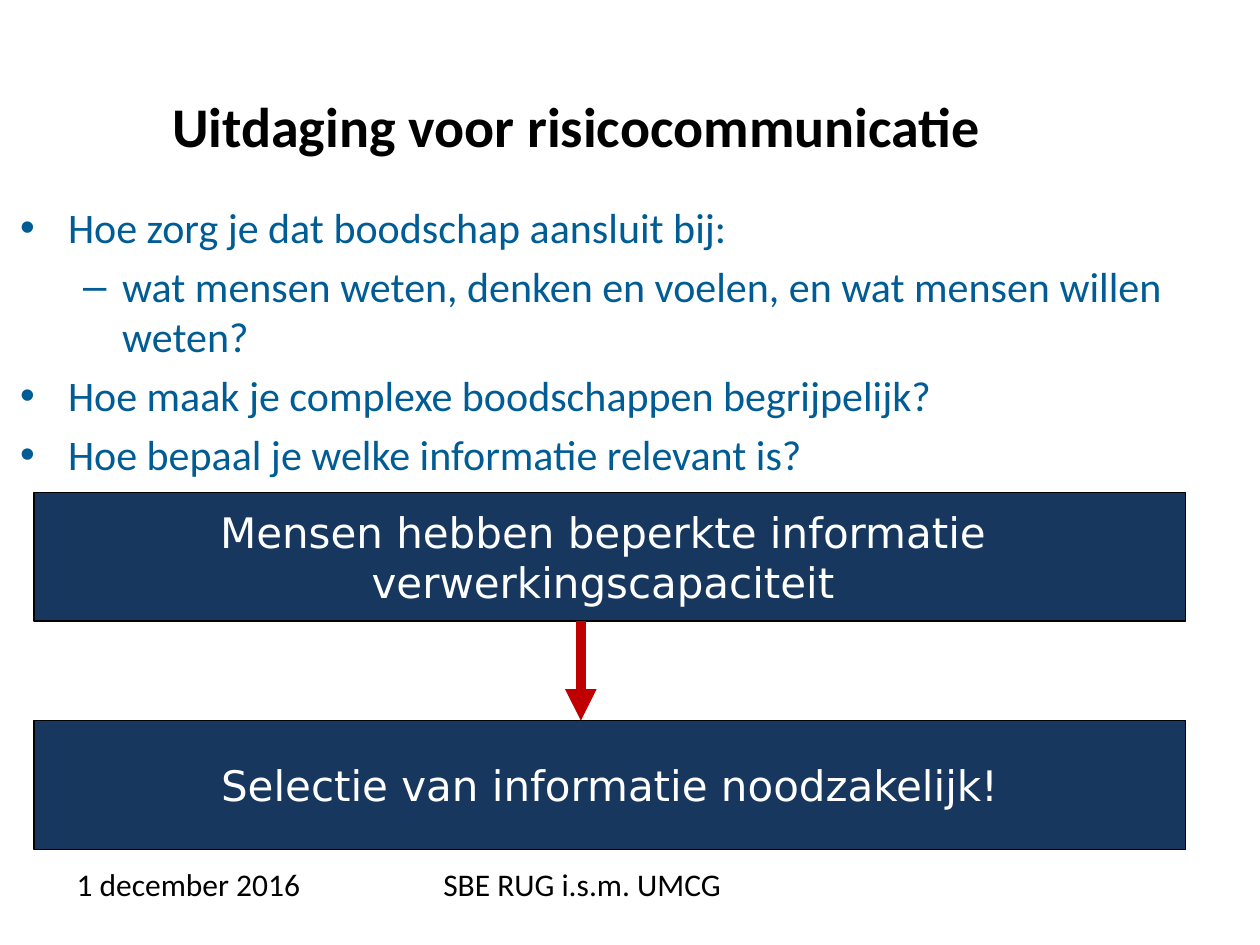
from lxml import etree
from pptx import Presentation
from pptx.dml.color import RGBColor
from pptx.enum.shapes import MSO_CONNECTOR, MSO_SHAPE
from pptx.enum.text import MSO_ANCHOR, MSO_AUTO_SIZE, PP_ALIGN
from pptx.oxml.ns import qn
from pptx.util import Inches, Pt

BLACK = RGBColor(0x00, 0x00, 0x00)
WHITE = RGBColor(0xFF, 0xFF, 0xFF)
BLUE = RGBColor(0x00, 0x5C, 0x95)
NAVY = RGBColor(0x17, 0x37, 0x5E)
RED = RGBColor(0xC0, 0x00, 0x00)
CENTER = PP_ALIGN.CENTER
TOP, MIDDLE = MSO_ANCHOR.TOP, MSO_ANCHOR.MIDDLE
NO_AUTOFIT = MSO_AUTO_SIZE.NONE
RECTANGLE, STRAIGHT = MSO_SHAPE.RECTANGLE, MSO_CONNECTOR.STRAIGHT


def add_run(para, text, size, color, name="Calibri", bold=False):
    span = para.add_run()
    span.text = text
    span.font.name = name
    span.font.size = Pt(size)
    span.font.bold = bold
    span.font.color.rgb = color


def place(shape, left, top, width, height):
    shape.left, shape.top = Inches(left), Inches(top)
    shape.width, shape.height = Inches(width), Inches(height)


deck = Presentation()
deck.slide_width, deck.slide_height = Inches(10), Inches(7.5)
page = deck.slides.add_slide(deck.slide_layouts[1])

# Title
title = page.shapes.title
place(title, -0.2, 0.68, 9.55, 1.02)
title.text_frame.auto_size = NO_AUTOFIT
title.text_frame.vertical_anchor = TOP
title_para = title.text_frame.paragraphs[0]
title_para.alignment = CENTER
add_run(title_para, "Uitdaging voor risicocommunicatie", 32, BLACK, bold=True)

# Questions
questions = [
    (0, "Hoe zorg je dat boodschap aansluit bij:"),
    (1, "wat mensen weten, denken en voelen, en wat mensen willen weten?"),
    (0, "Hoe maak je complexe boodschappen begrijpelijk?"),
    (0, "Hoe bepaal je welke informatie relevant is?"),
]
bullet_styles = [("•", 0.38, -0.38), ("–", 0.81, -0.31)]
body = page.placeholders[1]
place(body, 0.06, 1.55, 9.57, 4.48)
body.text_frame.auto_size = NO_AUTOFIT
for index, (level, text) in enumerate(questions):
    para = body.text_frame.paragraphs[0] if index == 0 else body.text_frame.add_paragraph()
    para.level = level
    bullet, margin, indent = bullet_styles[level]
    properties = para._p.get_or_add_pPr()
    properties.set("marL", str(Inches(margin)))
    properties.set("indent", str(Inches(indent)))
    etree.SubElement(properties, qn("a:buChar")).set("char", bullet)
    para.space_before = Pt(4.8 if index else 0)
    add_run(para, text, 24, BLUE)

# Statement boxes
statements = [
    (3.91, ["Mensen hebben beperkte informatie ", "verwerkingscapaciteit "]),
    (5.72, ["Selectie van informatie noodzakelijk!"]),
]
for top, lines in statements:
    box = page.shapes.add_shape(RECTANGLE, Inches(0.27), Inches(top), Inches(9.14), Inches(1.02))
    box.shadow.inherit = False
    box.fill.solid()
    box.fill.fore_color.rgb = NAVY
    box.line.color.rgb = BLACK
    box.line.width = Pt(0.75)
    frame = box.text_frame
    frame.word_wrap = False
    frame.vertical_anchor = MIDDLE
    for index, line in enumerate(lines):
        para = frame.paragraphs[0] if index == 0 else frame.add_paragraph()
        para.alignment = CENTER
        add_run(para, line, 24, WHITE, "DejaVu Sans")

# Arrow between the boxes, left of their centre
arrow = page.shapes.add_connector(STRAIGHT, Inches(4.61), Inches(4.93), Inches(4.61), Inches(5.72))
arrow.line.color.rgb = RED
arrow.line.width = Pt(6)
etree.SubElement(arrow.line._get_or_add_ln(), qn("a:tailEnd")).set("type", "triangle")
etree.SubElement(arrow._element.spPr, qn("a:effectLst"))

# Footer
for left, width, text in [(0.51, 2.33, "1 december 2016"), (3.42, 3.17, "SBE RUG i.s.m. UMCG")]:
    footer = page.shapes.add_textbox(Inches(left), Inches(6.82), Inches(width), Inches(0.4))
    footer.text_frame.word_wrap = True
    add_run(footer.text_frame.paragraphs[0], text, 18, BLACK)

deck.save("out.pptx")
